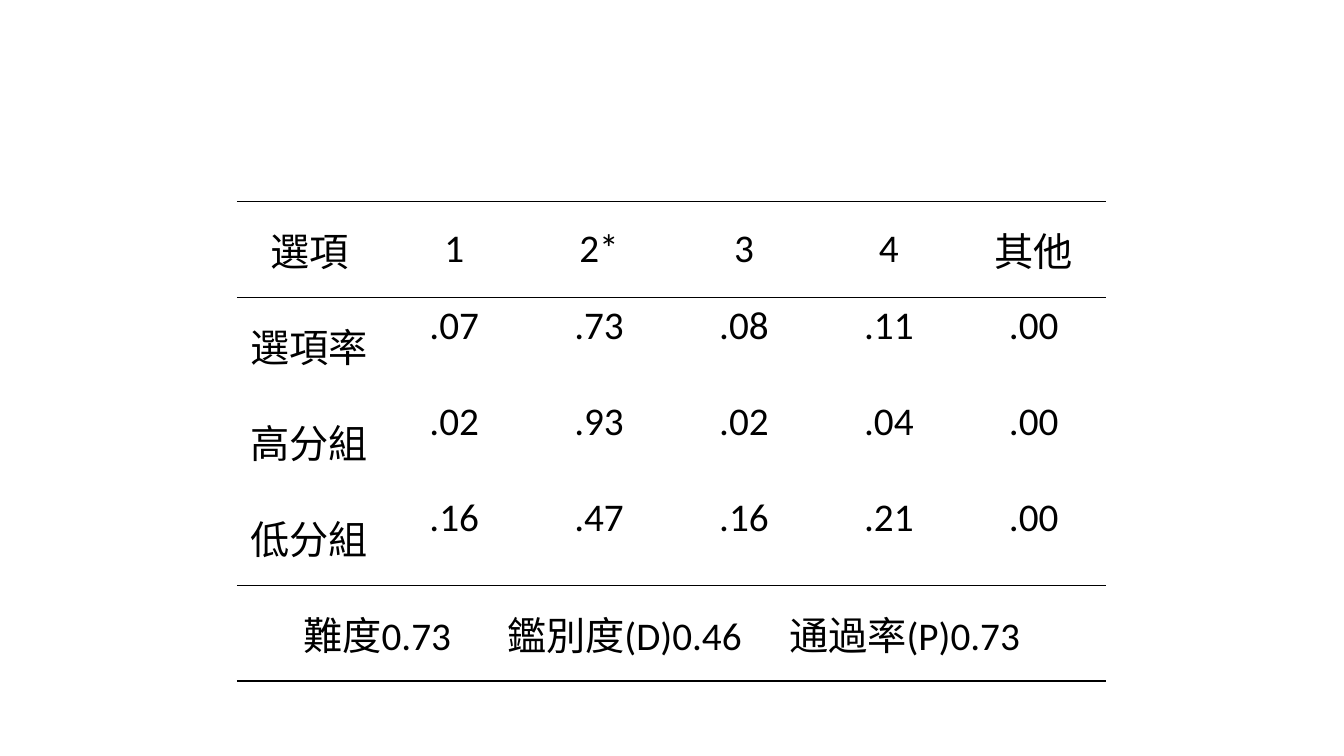
from dataclasses import dataclass

from lxml import etree
from pptx import Presentation
from pptx.dml.color import RGBColor
from pptx.enum.text import MSO_ANCHOR, PP_ALIGN
from pptx.oxml.ns import qn
from pptx.util import Pt


@dataclass(frozen=True)
class Theme:
    ink: str = "000000"
    size: int = 28
    chinese: str = "Lato"
    latin: str = "Calibri"
    rule: float = 1
    hanging: int = 18


THEME = Theme()
ROWS = [
    ["選項", "1", "2*", "3", "4", "其他"],
    ["選項率", ".07", ".73", ".08", ".11", ".00"],
    ["高分組", ".02", ".93", ".02", ".04", ".00"],
    ["低分組", ".16", ".47", ".16", ".21", ".00"],
]
SUMMARY = [("難度", "0.73"), ("鑑別度", "(D)0.46"), ("通過率", "(P)0.73")]
SUMMARY_INSET = 47.5
SUMMARY_TABS = [145.5, 347]


def add_run(p, value):
    r = p.add_run()
    r.text = value
    r.font.size = Pt(THEME.size)
    r.font.name = THEME.latin if value.isascii() else THEME.chinese
    r.font.color.rgb = RGBColor.from_string(THEME.ink)


def set_borders(cell, ruled):
    """Draw a rule on the sides named in ruled and clear the others."""
    tc_pr = cell._tc.get_or_add_tcPr()
    for i, side in enumerate("LRTB"):
        ln = etree.Element(qn(f"a:ln{side}"), w=str(Pt(THEME.rule)))
        if side in ruled:
            fill = etree.SubElement(ln, qn("a:solidFill"))
            etree.SubElement(fill, qn("a:srgbClr"), val=THEME.ink)
        else:
            etree.SubElement(ln, qn("a:noFill"))
        tc_pr.insert(i, ln)


def fill_cell(cell, value, middle):
    cell.vertical_anchor = MSO_ANCHOR.MIDDLE if middle else MSO_ANCHOR.TOP
    p = cell.text_frame.paragraphs[0]
    p.alignment = PP_ALIGN.CENTER
    p_pr = p._p.get_or_add_pPr()
    p_pr.set("marL", str(Pt(THEME.hanging)))
    p_pr.set("indent", str(-Pt(THEME.hanging)))
    add_run(p, value)


def fill_summary(cell):
    """Set the three indices at tab stops across the merged row."""
    cell.vertical_anchor = MSO_ANCHOR.MIDDLE
    cell.margin_left = Pt(SUMMARY_INSET)
    p = cell.text_frame.paragraphs[0]
    p.alignment = PP_ALIGN.LEFT
    tabs = etree.SubElement(p._p.get_or_add_pPr(), qn("a:tabLst"))
    for stop in SUMMARY_TABS:
        etree.SubElement(tabs, qn("a:tab"), pos=str(Pt(stop)), algn="l")
    for i, (label, value) in enumerate(SUMMARY):
        if i:
            add_run(p, "\t")
        add_run(p, label)
        add_run(p, value)


def add_item_table(s, left, top, width, height):
    n_rows, n_cols = len(ROWS) + 1, len(ROWS[0])
    table = s.shapes.add_table(n_rows, n_cols, Pt(left), Pt(top),
                               Pt(width), Pt(height)).table
    table.first_row = table.horz_banding = False
    for column in table.columns:
        column.width = Pt(width / n_cols)
    for row in table.rows:
        row.height = Pt(height / n_rows)

    # Rules above and below the header and the summary
    ruled = {0: "TB", 1: "T", n_rows - 2: "B", n_rows - 1: "TB"}
    for i in range(n_rows):
        for j in range(n_cols):
            cell = table.cell(i, j)
            cell.fill.background()
            set_borders(cell, ruled.get(i, ""))

    # Option rates by group
    for i, values in enumerate(ROWS):
        for j, value in enumerate(values):
            fill_cell(table.cell(i, j), value, middle=i == 0 or j == 0)

    # Summary row
    table.cell(n_rows - 1, 0).merge(table.cell(n_rows - 1, n_cols - 1))
    fill_summary(table.cell(n_rows - 1, 0))


def main():
    prs = Presentation()
    prs.slide_width, prs.slide_height = Pt(960), Pt(540)
    s = prs.slides.add_slide(prs.slide_layouts[6])
    add_item_table(s, left=169.2, top=144, width=621, height=342.5)
    prs.save("out.pptx")


if __name__ == "__main__":
    main()
